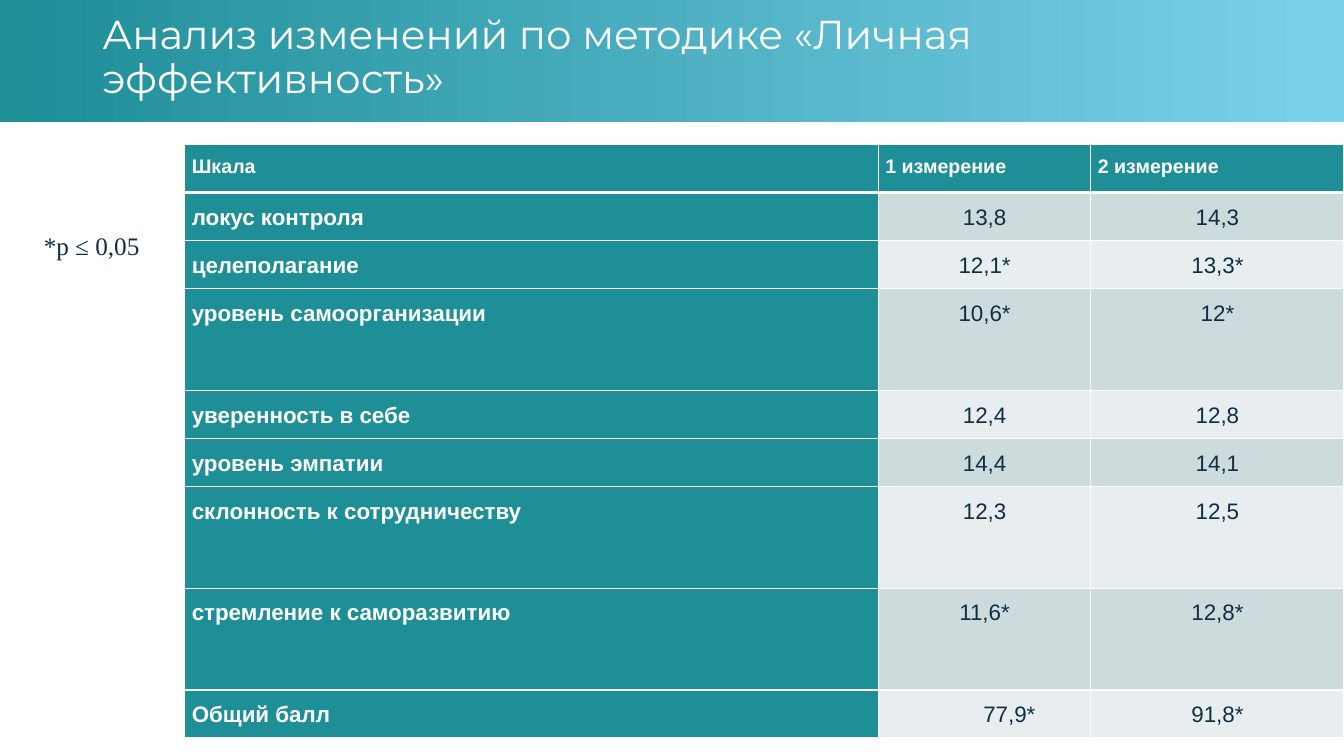
from lxml.etree import SubElement
from pptx import Presentation
from pptx.dml.color import RGBColor
from pptx.enum.shapes import MSO_SHAPE as Shape
from pptx.enum.text import MSO_ANCHOR as Anchor, MSO_AUTO_SIZE as AutoSize, PP_ALIGN as Align
from pptx.oxml.ns import qn
from pptx.util import Pt

WIDTH, HEIGHT = 960, 540
TEAL, SKY, WHITE, INK = "1E8E97", "7BD1EC", "FFFFFF", "0F3043"
BANDS = ("CDDBDD", "E8EEEF")
COLUMN_WIDTHS = (495.4, 151.8, 180.8)
LOW_ROW, TALL_ROW = 34.3, 72.7
HEADER = ("Шкала", "1 измерение", "2 измерение")
SCALES = (
    ("локус контроля", "13,8", "14,3", LOW_ROW),
    ("целеполагание", "12,1*", "13,3*", LOW_ROW),
    ("уровень самоорганизации", "10,6*", "12*", TALL_ROW),
    ("уверенность в себе", "12,4", "12,8", LOW_ROW),
    ("уровень эмпатии", "14,4", "14,1", LOW_ROW),
    ("склонность к сотрудничеству", "12,3", "12,5", TALL_ROW),
    ("стремление к саморазвитию", "11,6*", "12,8*", TALL_ROW),
    ("Общий балл", "77,9*", "91,8*", LOW_ROW),
)


def color(value):
    return RGBColor.from_string(value)


def write(frame, text, *, size, font, fill, bold=False, align=Align.LEFT,
          spacing=1.0, after=0, indent=0):
    para = frame.paragraphs[0]
    para.alignment, para.line_spacing = align, spacing
    para.space_before, para.space_after = Pt(0), Pt(after)
    if indent:
        para._p.get_or_add_pPr().set("indent", str(Pt(indent)))
    span = para.add_run()
    span.text = text
    span.font.size, span.font.name, span.font.bold = Pt(size), font, bold
    span.font.color.rgb = color(fill)


def set_borders(cell, **widths):
    """Draw white borders; widths are keyed by side: L, R, T, B."""
    properties = cell._tc.get_or_add_tcPr()
    for side in "LRTB":
        line = SubElement(properties, qn(f"a:ln{side}"), w=str(Pt(widths.get(side, 1))))
        solid = SubElement(line, qn("a:solidFill"))
        SubElement(solid, qn("a:srgbClr"), val=WHITE)


def add_heading(slide, left, top, width, height):
    band = slide.shapes.add_shape(Shape.RECTANGLE, Pt(left), Pt(top), Pt(width), Pt(height))
    band.shadow.inherit = False
    band.line.fill.background()
    band.fill.gradient()
    band.fill.gradient_angle = 0
    for stop, value in zip(band.fill.gradient_stops, (TEAL, SKY)):
        stop.color.rgb = color(value)
    title = slide.shapes.title
    band._element.addnext(title._element)  # the title stands in front of the band
    title.left, title.top = Pt(left + 66), Pt(top + 13)
    title.width, title.height = Pt(width - 132), Pt(57.6)
    frame = title.text_frame
    frame.word_wrap, frame.auto_size = True, AutoSize.NONE
    frame.vertical_anchor = Anchor.MIDDLE
    write(frame, "Анализ изменений по методике «Личная эффективность»",
          size=28.8, font="Montserrat", fill=WHITE, spacing=0.9)


def fill_cell(cell, text, background, *, borders, **text_format):
    cell.margin_left = cell.margin_right = Pt(5)
    cell.margin_top = cell.margin_bottom = Pt(0)
    set_borders(cell, **borders)
    cell.fill.solid()
    cell.fill.fore_color.rgb = color(background)
    write(cell.text_frame, text, font="Arial", spacing=1.5, after=8, **text_format)


def add_scale_table(slide, left, top):
    heights = [LOW_ROW] + [height for *_, height in SCALES]
    table = slide.shapes.add_table(len(heights), len(HEADER), Pt(left), Pt(top),
                                   Pt(sum(COLUMN_WIDTHS)), Pt(sum(heights))).table
    table.horz_banding = False
    for column, width in zip(table.columns, COLUMN_WIDTHS):
        column.width = Pt(width)
    for row, height in zip(table.rows, heights):
        row.height = Pt(height)
    for column, text in enumerate(HEADER):
        fill_cell(table.cell(0, column), text, TEAL, borders={"B": 3},
                  size=14, fill=WHITE, bold=True)
    for row, (name, *values, _) in enumerate(SCALES, 1):
        borders = {"T": 3} if row == 1 else {}
        fill_cell(table.cell(row, 0), name, TEAL, borders=borders,
                  size=16, fill=WHITE, bold=True)
        for column, value in enumerate(values, 1):
            is_first_total = row == len(SCALES) and column == 1
            fill_cell(table.cell(row, column), value, BANDS[(row - 1) % 2], borders=borders,
                      size=16, fill=INK, align=Align.CENTER,
                      indent=35.4 if is_first_total else 0)


def add_note(slide, left, top, width, height):
    box = slide.shapes.add_textbox(Pt(left), Pt(top), Pt(width), Pt(height))
    box.text_frame.word_wrap = False
    write(box.text_frame, "*p ≤ 0,05", size=18, font="Times New Roman", fill=INK)


def main():
    deck = Presentation()
    deck.slide_width, deck.slide_height = Pt(WIDTH), Pt(HEIGHT)
    slide = deck.slides.add_slide(deck.slide_layouts[5])
    add_heading(slide, 0, 0, WIDTH, 87)
    add_scale_table(slide, WIDTH - sum(COLUMN_WIDTHS), 103.3)
    add_note(slide, 24.2, 160.6, 83.5, 51)
    deck.save("out.pptx")


if __name__ == "__main__":
    main()
